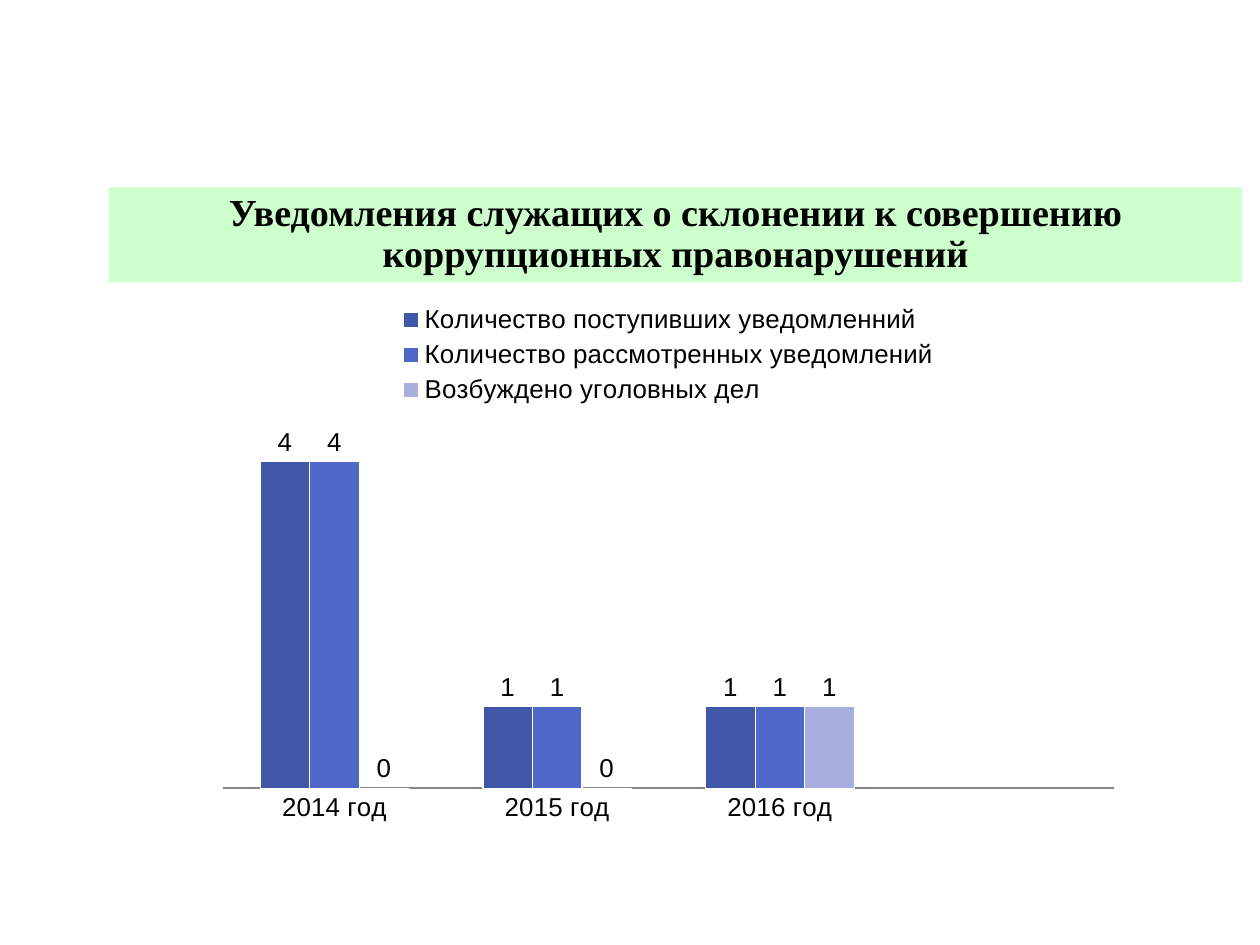
from dataclasses import dataclass

from lxml import etree
from pptx import Presentation
from pptx.chart.data import CategoryChartData as Data
from pptx.dml.color import RGBColor
from pptx.enum.chart import XL_CHART_TYPE as Kind
from pptx.enum.chart import XL_LABEL_POSITION as Spot
from pptx.enum.chart import XL_LEGEND_POSITION as Side
from pptx.enum.chart import XL_TICK_LABEL_POSITION as Place
from pptx.enum.chart import XL_TICK_MARK as Tick
from pptx.enum.text import MSO_ANCHOR as Anchor
from pptx.enum.text import PP_ALIGN as Align
from pptx.oxml.ns import qn
from pptx.util import Pt

BLACK = RGBColor(0x00, 0x00, 0x00)
WHITE = RGBColor(0xFF, 0xFF, 0xFF)
GREEN = RGBColor(0xCC, 0xFF, 0xCC)
GREY = RGBColor(0x86, 0x86, 0x86)
NAVY = RGBColor(0x40, 0x56, 0xA6)
BLUE = RGBColor(0x4E, 0x67, 0xC8)
LILAC = RGBColor(0xA8, 0xAF, 0xDE)


@dataclass
class Box:
    left: float
    top: float
    width: float
    height: float

    def place(self) -> tuple:
        return Pt(self.left), Pt(self.top), Pt(self.width), Pt(self.height)


@dataclass
class Series:
    name: str
    values: tuple
    color: RGBColor


YEARS = ("2014 год", "2015 год", "2016 год", "")
SERIES = (
    Series("Количество поступивших уведомленний", (4, 1, 1, None), NAVY),
    Series("Количество рассмотренных уведомлений", (4, 1, 1, None), BLUE),
    Series("Возбуждено уголовных дел", (0, 0, 1, None), LILAC),
)


def add_text(slide, box: Box, text: str, *, font: str, size: float,
             color: RGBColor, fill: RGBColor, bold: bool = False,
             align=Align.CENTER, spacing: float = 1.0) -> None:
    shape = slide.shapes.add_textbox(*box.place())
    shape.fill.solid()
    shape.fill.fore_color.rgb = fill
    frame = shape.text_frame
    frame.word_wrap = True
    frame.vertical_anchor = Anchor.MIDDLE
    frame.margin_left = frame.margin_right = 0
    frame.margin_top = frame.margin_bottom = 0
    line = frame.paragraphs[0]
    line.alignment = align
    line.line_spacing = spacing
    run = line.add_run()
    run.text = text
    run.font.name = font
    run.font.size = Pt(size)
    run.font.bold = bold
    run.font.color.rgb = color


def fix_plot(chart, area: dict) -> None:
    """Pin the inner plot area, given in fractions of the chart."""
    plot = chart.element.find(".//" + qn("c:plotArea"))
    for old in plot.findall(qn("c:layout")):
        plot.remove(old)
    layout = etree.Element(qn("c:layout"))
    manual = etree.SubElement(layout, qn("c:manualLayout"))
    parts = {"layoutTarget": "inner", "xMode": "edge", "yMode": "edge", **area}
    for tag, value in parts.items():
        etree.SubElement(manual, qn(f"c:{tag}")).set("val", str(value))
    plot.insert(0, layout)


def add_bars(slide, box: Box) -> None:
    data = Data()
    data.categories = YEARS
    for item in SERIES:
        data.add_series(item.name, item.values)
    chart = slide.shapes.add_chart(
        Kind.COLUMN_CLUSTERED, *box.place(), data).chart
    chart.has_title = False
    chart.font.name = "Arial"
    chart.font.size = Pt(16.3)
    chart.font.color.rgb = BLACK

    # Legend
    chart.has_legend = True
    chart.legend.position = Side.TOP
    chart.legend.include_in_layout = False

    # Axes
    years = chart.category_axis
    years.major_tick_mark = years.minor_tick_mark = Tick.NONE
    years.tick_label_position = Place.NEXT_TO_AXIS
    years.format.line.color.rgb = GREY
    years.format.line.width = Pt(1.25)
    scale = chart.value_axis
    scale.minimum_scale, scale.maximum_scale = 0, 4.5
    scale.has_major_gridlines = False
    scale.visible = False

    # Columns and their values
    plot = chart.plots[0]
    plot.gap_width = 150
    plot.overlap = 0
    plot.vary_by_categories = False
    for bar, item in zip(plot.series, SERIES):
        bar.format.fill.solid()
        bar.format.fill.fore_color.rgb = item.color
        bar.format.line.color.rgb = WHITE
        bar.format.line.width = Pt(0.75)
        labels = bar.data_labels
        labels.show_value = True
        labels.position = Spot.OUTSIDE_END
    fix_plot(chart, {"x": 0.02, "y": 0.24, "w": 0.96, "h": 0.68})


def main() -> None:
    deck = Presentation()
    deck.slide_width, deck.slide_height = Pt(793.7), Pt(595.28)
    slide = deck.slides.add_slide(deck.slide_layouts[6])

    # Heading
    add_text(slide, Box(68.4, 118.1, 714.2, 59.6),
             "Уведомления служащих о склонении к совершению "
             "коррупционных правонарушений",
             font="Times New Roman", size=24, color=BLACK, fill=GREEN,
             bold=True, spacing=0.9)

    # Chart
    add_bars(slide, Box(128.9, 183.6, 584.6, 340.2))
    deck.save("out.pptx")


if __name__ == "__main__":
    main()
